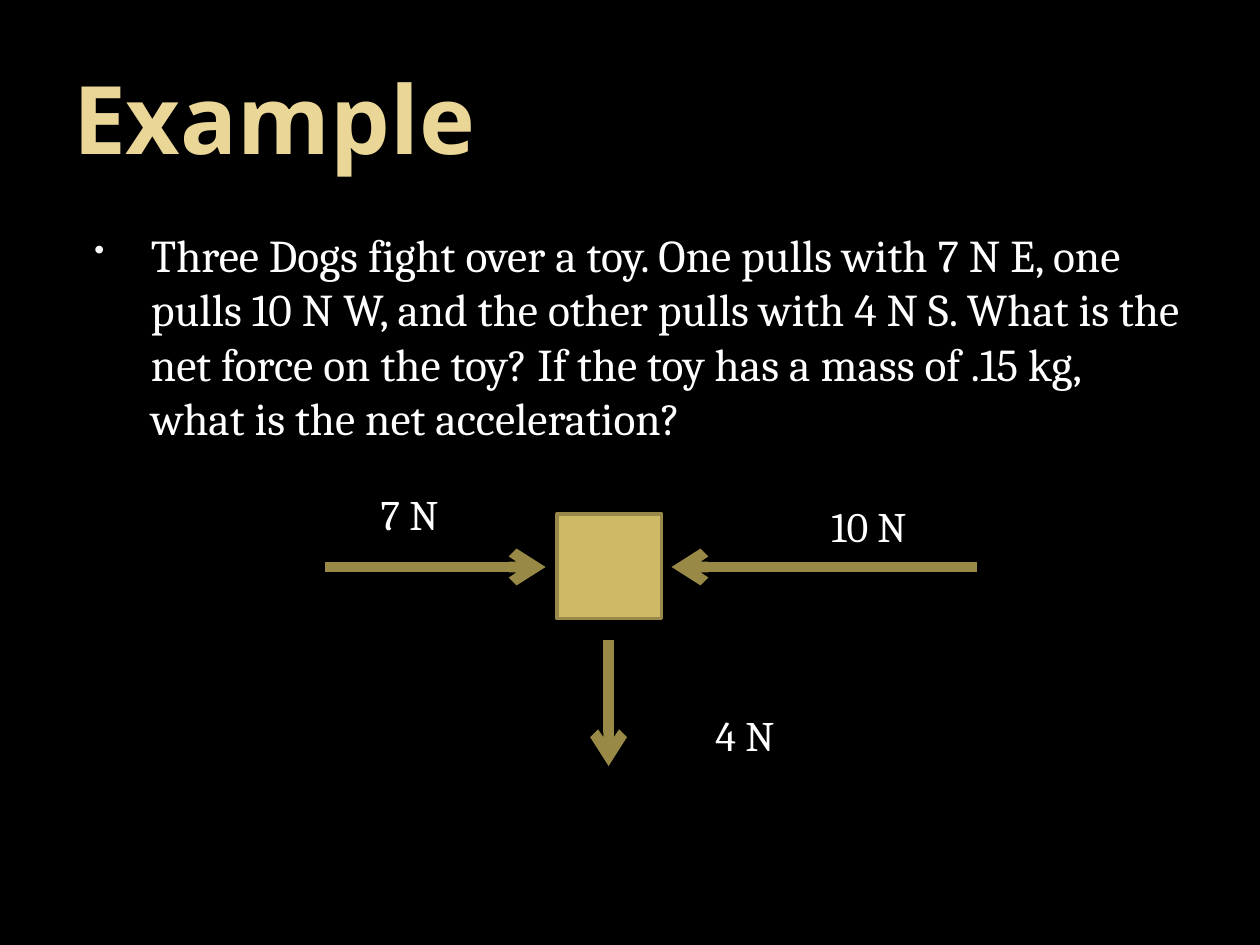
from lxml import etree
from pptx import Presentation
from pptx.dml.color import RGBColor
from pptx.enum.shapes import MSO_CONNECTOR, MSO_SHAPE
from pptx.enum.text import MSO_ANCHOR
from pptx.oxml.ns import qn
from pptx.util import Inches, Pt

STRAIGHT = MSO_CONNECTOR.STRAIGHT
RECTANGLE = MSO_SHAPE.RECTANGLE
MIDDLE = MSO_ANCHOR.MIDDLE
BLACK = RGBColor(0x00, 0x00, 0x00)
WHITE = RGBColor(0xFF, 0xFF, 0xFF)
PALE_GOLD = RGBColor(0xEA, 0xD6, 0x96)
GOLD = RGBColor(0xCE, 0xB9, 0x66)
TOY_EDGE = RGBColor(0x98, 0x89, 0x4B)
ARROW_GOLD = RGBColor(0x99, 0x89, 0x46)

QUESTION = (
    "Three Dogs fight over a toy. One pulls with 7 N E, one pulls 10 N W, "
    "and the other pulls with 4 N S. What is the net force on the toy? "
    "If the toy has a mass of .15 kg, what is the net acceleration?"
)

deck = Presentation()
deck.slide_width = Inches(10)
deck.slide_height = Inches(7.5)
page = deck.slides.add_slide(deck.slide_layouts[6])
page.background.fill.solid()
page.background.fill.fore_color.rgb = BLACK


def add_text(text, left, top, width, height, size, font="Cambria", color=WHITE, wrap=True):
    box = page.shapes.add_textbox(Inches(left), Inches(top), Inches(width), Inches(height))
    box.text_frame.word_wrap = wrap
    box.text_frame.text = text
    span = box.text_frame.paragraphs[0].runs[0]
    span.font.size = Pt(size)
    span.font.name = font
    span.font.color.rgb = color
    return box


title = add_text("Example", 0.5, 0.3, 9, 1.25, 54, "Noto Sans", PALE_GOLD)
title.text_frame.vertical_anchor = MIDDLE
title.text_frame.margin_left = Inches(0.08)
title.text_frame.paragraphs[0].runs[0].font.bold = True

body = add_text(QUESTION, 0.5, 1.75, 9, 5.08, 26)
para_props = body.text_frame.paragraphs[0]._p.get_or_add_pPr()
para_props.set("marL", str(Inches(0.6)))
para_props.set("indent", str(Inches(-0.45)))
space_before = etree.SubElement(para_props, qn("a:spcBef"))
etree.SubElement(space_before, qn("a:spcPct"), val="20000")
bullet_color = etree.SubElement(para_props, qn("a:buClr"))
etree.SubElement(bullet_color, qn("a:srgbClr"), val="F9F9F9")
etree.SubElement(para_props, qn("a:buSzPct"), val="65000")
etree.SubElement(para_props, qn("a:buChar"), char="•")

toy = page.shapes.add_shape(RECTANGLE, Inches(4.42), Inches(4.08), Inches(0.83), Inches(0.83))
toy.shadow.inherit = False
toy.fill.solid()
toy.fill.fore_color.rgb = GOLD
toy.line.color.rgb = TOY_EDGE
toy.line.width = Pt(2)

forces = [
    ((2.58, 4.5, 4.33, 4.5), "7 N", (2.92, 3.83, 0.92), True),
    ((7.75, 4.5, 5.33, 4.5), "10 N", (6.5, 3.92, 0.9), False),
    ((4.83, 5.08, 4.83, 6.08), "4 N", (5.58, 5.58, 0.73), False),
]
for ends, label, (left, top, width), wrap in forces:
    arrow = page.shapes.add_connector(STRAIGHT, *[Inches(value) for value in ends])
    arrow.line.color.rgb = ARROW_GOLD
    arrow.line.width = Pt(6)
    etree.SubElement(arrow.line._get_or_add_ln(), qn("a:tailEnd"), type="arrow")
    etree.SubElement(arrow._element.spPr, qn("a:effectLst"))
    add_text(label, left, top, width, 0.5, 24, wrap=wrap)

deck.save("out.pptx")
